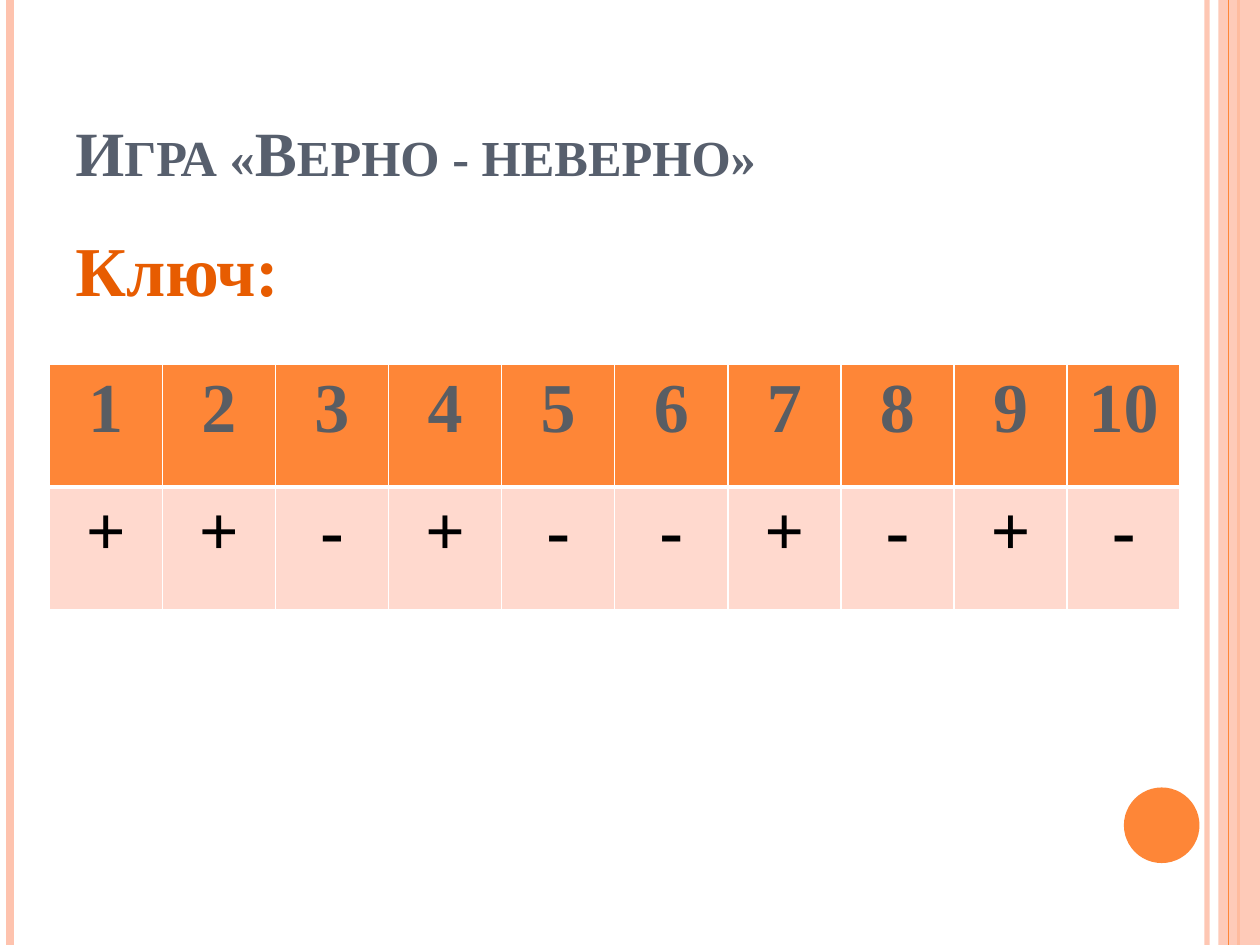
from lxml import etree
from pptx import Presentation
from pptx import util as u
from pptx.dml.color import RGBColor
from pptx.enum import shapes, text
from pptx.oxml.ns import qn

FONT = "Times New Roman"
ORANGE, PEACH, WHITE = "FE8637", "FEC3AE", "FFFFFF"
ANSWERS = "++-+--+-+-"


def paint(color_owner, color, opacity=100):
    """Give a fill a solid colour, with an opacity in percent."""
    color_owner.solid()
    color_owner.fore_color.rgb = RGBColor.from_string(color)
    if opacity < 100:
        rgb = color_owner._xPr.find(".//" + qn("a:srgbClr"))
        etree.SubElement(rgb, qn("a:alpha"), val=str(opacity * 1000))


def add_stripe(slide, x, color, width, opacity=100):
    stripe = slide.shapes.add_connector(
        shapes.MSO_CONNECTOR.STRAIGHT, u.Inches(x), 0, u.Inches(x), u.Inches(7.5))
    paint(stripe.line.fill, color, opacity)
    stripe.line.width = u.Pt(width)
    etree.SubElement(stripe._element.spPr, qn("a:effectLst"))


def add_plain_shape(slide, kind, box, color, opacity=100):
    shape = slide.shapes.add_shape(kind, *map(u.Inches, box))
    shape.shadow.inherit = False
    paint(shape.fill, color, opacity)
    shape.line.fill.background()


def write(paragraph, words, size, color):
    run = paragraph.add_run()
    run.text = words
    run.font.name, run.font.size, run.font.bold = FONT, u.Pt(size), True
    run.font.color.rgb = RGBColor.from_string(color)
    return run


def add_heading(slide, box, words, size, color, anchor):
    frame = slide.shapes.add_textbox(*map(u.Inches, box)).text_frame
    frame.word_wrap = True
    frame.vertical_anchor = anchor
    paragraph = frame.paragraphs[0]
    return paragraph, write(paragraph, words, size, color)


def set_borders(cell, **widths):
    """Draw white cell borders; keys are L, R, T, B and values are points."""
    properties = cell._tc.get_or_add_tcPr()
    for position, side in enumerate("LRTB"):
        border = etree.Element(qn("a:ln" + side), w=str(u.Pt(widths.get(side, 1))))
        fill = etree.SubElement(border, qn("a:solidFill"))
        etree.SubElement(fill, qn("a:srgbClr"), val=WHITE)
        properties.insert(position, border)


def fill_cell(cell, words, text_color, background, **borders):
    paint(cell.fill, background)
    set_borders(cell, **borders)
    paragraph = cell.text_frame.paragraphs[0]
    paragraph.alignment = text.PP_ALIGN.CENTER
    write(paragraph, words, 40, text_color)


def add_answer_key(slide, answers):
    table = slide.shapes.add_table(
        2, len(answers), u.Inches(0.39), u.Inches(2.89),
        u.Inches(8.98), u.Inches(1.95)).table
    for number, answer in enumerate(answers, 1):
        fill_cell(table.cell(0, number - 1), str(number), "595D63", ORANGE, B=3)
        fill_cell(table.cell(1, number - 1), answer, "000000", "FFD9CE", T=3)


def add_decoration(slide):
    add_stripe(slide, 9.58, PEACH, 3, 93)
    add_stripe(slide, 0.08, PEACH, 4.5)
    add_stripe(slide, 9.83, ORANGE, 1.5)
    add_plain_shape(slide, shapes.MSO_SHAPE.RECTANGLE, (9.67, 0, 0.33, 7.5), PEACH, 87)
    add_stripe(slide, 9.75, ORANGE, 0.75)
    add_plain_shape(slide, shapes.MSO_SHAPE.OVAL, (8.92, 6.25, 0.6, 0.6), ORANGE)


def main():
    deck = Presentation()
    deck.slide_width, deck.slide_height = u.Inches(10), u.Inches(7.5)
    slide = deck.slides.add_slide(deck.slide_layouts[6])
    add_decoration(slide)
    _, title = add_heading(slide, (0.5, 0.3, 8.17, 1.25), "Игра «Верно - неверно»",
                           36, "575F6D", text.MSO_ANCHOR.BOTTOM)
    title.font._element.set("cap", "small")
    key_label, _ = add_heading(slide, (0.5, 1.75, 8.17, 5.33), "Ключ:",
                               40, "E75C01", text.MSO_ANCHOR.TOP)
    key_label.space_before = u.Pt(6)
    add_answer_key(slide, ANSWERS)
    deck.save("out.pptx")


if __name__ == "__main__":
    main()
